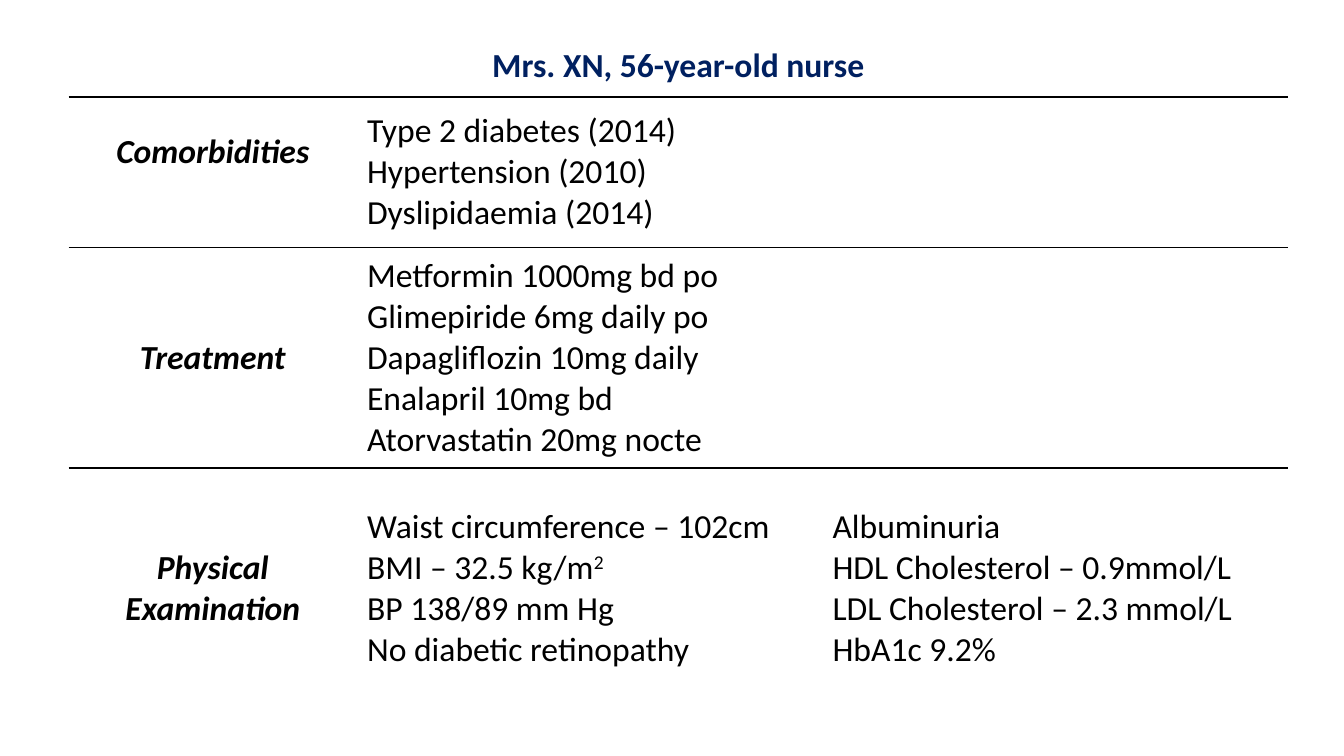
"""Builds a one-slide clinical case summary table."""
from dataclasses import dataclass

from lxml import etree
from pptx import Presentation
from pptx.dml.color import RGBColor
from pptx.enum.text import MSO_ANCHOR, PP_ALIGN
from pptx.oxml.ns import qn
from pptx.util import Pt

MIDDLE = MSO_ANCHOR.MIDDLE
CENTER = PP_ALIGN.CENTER
LEFT = PP_ALIGN.LEFT


@dataclass(frozen=True)
class Theme:
    """Holds the colours, font and sizes of the slide."""
    font: str = "Calibri"
    size: int = 24
    ink: str = "000000"
    title: str = "002060"
    paper: str = "FFFFFF"
    rule: float = 1
    title_rule: float = 1.5
    superscript: str = "30000"


class CaseSlide:
    """Draws table parts on one slide in a common style."""

    def __init__(self, slide, theme):
        self.slide = slide
        self.theme = theme

    def table(self, left, top, widths, heights):
        """Adds a plain white table."""
        table = self.slide.shapes.add_table(
            len(heights), len(widths), Pt(left), Pt(top),
            Pt(sum(widths)), Pt(sum(heights))).table
        table.first_row = table.horz_banding = False
        for column, width in zip(table.columns, widths):
            column.width = Pt(width)
        for row, height in zip(table.rows, heights):
            row.height = Pt(height)
        for cell in table.iter_cells():
            self.rule(cell, "a:lnL")
            self.rule(cell, "a:lnR")
        return table

    def rule(self, cell, side, width=0):
        """Sets one cell border, or none when the width is zero."""
        properties = cell._tc.get_or_add_tcPr()
        line = etree.SubElement(properties, qn(side), w=str(Pt(width)))
        if width:
            fill = etree.SubElement(line, qn("a:solidFill"))
            etree.SubElement(fill, qn("a:srgbClr"), val=self.theme.ink)
        else:
            etree.SubElement(line, qn("a:noFill"))

    def row_rules(self, row, above, below):
        """Sets the borders and white fill of a whole row."""
        for cell in row.cells:
            self.rule(cell, "a:lnT", above)
            self.rule(cell, "a:lnB", below)
            cell.fill.solid()
            cell.fill.fore_color.rgb = RGBColor.from_string(self.theme.paper)

    def run(self, paragraph, text, color, bold, italic):
        """Adds one styled run."""
        run = paragraph.add_run()
        run.text = text
        font = run.font
        font.name = self.theme.font
        font.size = Pt(self.theme.size)
        font.bold, font.italic = bold, italic
        font.color.rgb = RGBColor.from_string(color)
        return run

    def text(self, cell, lines, align=LEFT, color=None, bold=False, italic=False):
        """Fills a cell with lines, raising whatever follows a caret."""
        cell.vertical_anchor = MIDDLE
        frame = cell.text_frame
        for index, line in enumerate(lines):
            paragraph = frame.add_paragraph() if index else frame.paragraphs[0]
            paragraph.alignment = align
            base, _, raised = line.partition("^")
            style = color or self.theme.ink, bold, italic
            self.run(paragraph, base, *style)
            if raised:
                exponent = self.run(paragraph, raised, *style)
                exponent.font._element.set("baseline", self.theme.superscript)

    def label(self, cell, text):
        """Fills a row heading."""
        self.text(cell, [text], CENTER, bold=True, italic=True)


TITLE = "Mrs. XN, 56-year-old nurse"
SECTIONS = [
    ("Comorbidities", [
        ["Type 2 diabetes (2014)", "Hypertension (2010)",
         "Dyslipidaemia (2014)"]]),
    ("Treatment", [
        ["Metformin 1000mg bd po", "Glimepiride 6mg daily po",
         "Dapagliflozin 10mg daily", "Enalapril 10mg bd",
         "Atorvastatin 20mg nocte"]]),
    ("Physical Examination", [
        ["Waist circumference – 102cm", "BMI – 32.5 kg/m^2",
         "BP 138/89 mm Hg", "No diabetic retinopathy"],
        ["Albuminuria", "HDL Cholesterol – 0.9mmol/L",
         "LDL Cholesterol – 2.3 mmol/L", "HbA1c 9.2%"]]),
]


def main():
    """Builds and saves the presentation."""
    deck = Presentation()
    deck.slide_width, deck.slide_height = Pt(960), Pt(540)
    theme = Theme()
    case = CaseSlide(deck.slides.add_slide(deck.slide_layouts[6]), theme)

    summary = case.table(49, 25.7, [206, 332.5, 332.5], [43.7, 107.2, 157.8, 172])
    rules = [0, theme.title_rule, theme.rule, theme.rule, 0]
    for row, above, below in zip(summary.rows, rules, rules[1:]):
        case.row_rules(row, above, below)

    title = summary.cell(0, 0)
    title.merge(summary.cell(0, 2))
    case.text(title, [TITLE], CENTER, theme.title, bold=True)

    for row, (heading, findings) in enumerate(SECTIONS, start=1):
        case.label(summary.cell(row, 0), heading)
        if len(findings) == 1:
            summary.cell(row, 1).merge(summary.cell(row, 2))
        for column, lines in enumerate(findings, start=1):
            case.text(summary.cell(row, column), lines)
    summary.cell(1, 0).margin_bottom = Pt(33)

    deck.save("out.pptx")


if __name__ == "__main__":
    main()
